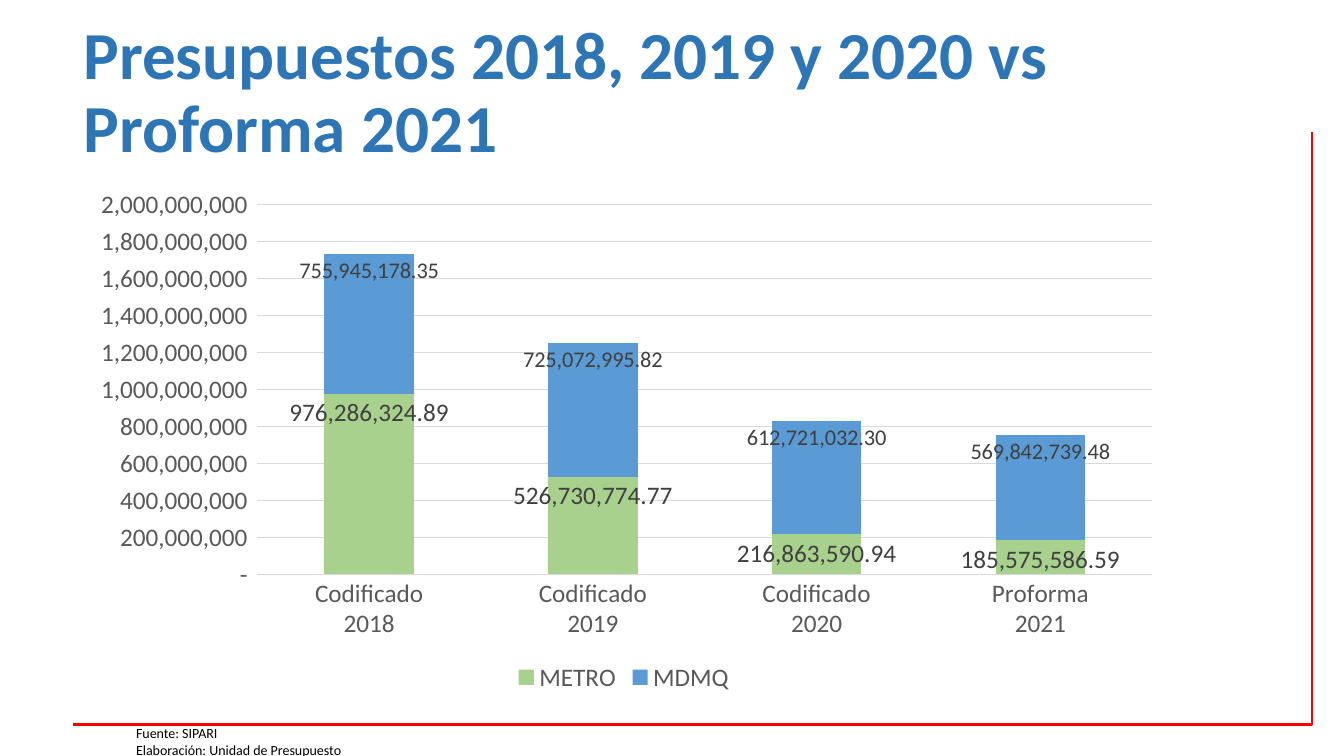
from pptx import Presentation
from pptx import util as u
from pptx.chart.data import CategoryChartData
from pptx.dml.color import RGBColor
from pptx.enum import chart as ch, text

FONT = "Calibri"
COLORS = {
    "title": "2E75B6", "frame": "FF0000", "note": "000000",
    "axis": "595959", "grid": "D9D9D9", "label": "404040",
    "METRO": "A9D18E", "MDMQ": "5B9BD5",
}
YEARS = ["Codificado\n2018", "Codificado\n2019", "Codificado\n2020", "Proforma\n2021"]
# Name, values, label size
BUDGETS = [
    ("METRO", [976286324.89, 526730774.77, 216863590.94, 185575586.59], 18),
    ("MDMQ", [755945178.35, 725072995.82, 612721032.30, 569842739.48], 16),
]
AXIS_FORMAT = r'_(* #,##0_);_(* \(#,##0\);_(* "-"_);_(@_)'
LABEL_FORMAT = r'_(* #,##0.00_);_(* \(#,##0.00\);_(* "-"??_);_(@_)'


def color(name):
    return RGBColor.from_string(COLORS[name])


def set_font(font, size, name, bold=False):
    font.name, font.size, font.bold = FONT, u.Pt(size), bold
    font.color.rgb = color(name)


def set_line(line, name, width):
    line.color.rgb = color(name)
    line.width = u.Pt(width)


def add_text(s, box, lines, size, name, bold=False, spacing=1.0,
             anchor=text.MSO_ANCHOR.TOP):
    tf = s.shapes.add_textbox(*map(u.Cm, box)).text_frame
    tf.word_wrap = True
    tf.vertical_anchor = anchor
    for i, line in enumerate(lines):
        p = tf.add_paragraph() if i else tf.paragraphs[0]
        p.line_spacing = spacing
        r = p.add_run()
        r.text = line
        set_font(r.font, size, name, bold)


def add_frame(s, box):
    """Draw the right and bottom edges of the box."""
    left, top, width, height = map(u.Cm, box)
    right, bottom = left + width, top + height
    fb = s.shapes.build_freeform(right, top)
    fb.add_line_segments([(right, bottom), (left, bottom)], close=False)
    sp = fb.convert_to_shape()
    sp.shadow.inherit = False
    sp.fill.background()
    set_line(sp.line, "frame", 1.75)


def add_title(s, box):
    add_text(s, box, ["Presupuestos 2018, 2019 y 2020 vs Proforma 2021"], 48,
             "title", True, 0.9, text.MSO_ANCHOR.MIDDLE)


def add_source(s, box):
    add_text(s, box, ["Fuente: SIPARI", "Elaboración: Unidad de Presupuesto"],
             10, "note")


def add_budget_chart(s, box):
    data = CategoryChartData()
    data.categories = YEARS
    for name, values, _ in BUDGETS:
        data.add_series(name, values)
    chart = s.shapes.add_chart(
        ch.XL_CHART_TYPE.COLUMN_STACKED, *map(u.Cm, box), data).chart
    set_font(chart.font, 10, "note")
    chart.has_title = False

    # Axes
    years, amounts = chart.category_axis, chart.value_axis
    for axis in (years, amounts):
        axis.major_tick_mark = axis.minor_tick_mark = ch.XL_TICK_MARK.NONE
        set_font(axis.tick_labels.font, 18, "axis")
    set_line(years.format.line, "grid", 0.75)
    amounts.format.line.fill.background()
    set_line(amounts.major_gridlines.format.line, "grid", 0.75)
    amounts.tick_labels.number_format = AXIS_FORMAT
    amounts.tick_labels.number_format_is_linked = False

    # Legend
    chart.has_legend = True
    chart.legend.position = ch.XL_LEGEND_POSITION.BOTTOM
    chart.legend.include_in_layout = False
    set_font(chart.legend.font, 18, "axis")

    # Columns and their labels
    plot = chart.plots[0]
    plot.gap_width, plot.overlap = 150, 100
    plot.vary_by_categories = False
    for series, (name, _, size) in zip(plot.series, BUDGETS):
        series.format.fill.solid()
        series.format.fill.fore_color.rgb = color(name)
        labels = series.data_labels
        labels.show_value = True
        labels.position = ch.XL_LABEL_POSITION.INSIDE_END
        labels.number_format = LABEL_FORMAT
        labels.number_format_is_linked = False
        set_font(labels.font, size, "label")


def main():
    prs = Presentation()
    prs.slide_width, prs.slide_height = u.Cm(33.87), u.Cm(19.05)
    s = prs.slides.add_slide(prs.slide_layouts[6])
    add_frame(s, (1.83, 3.33, 31.24, 14.93))
    add_title(s, (1.85, 0.53, 29.21, 3.68))
    add_source(s, (3.18, 18.14, 12.42, 1.12))
    add_budget_chart(s, (1.85, 4.5, 27.74, 13.08))
    prs.save("out.pptx")


if __name__ == "__main__":
    main()
